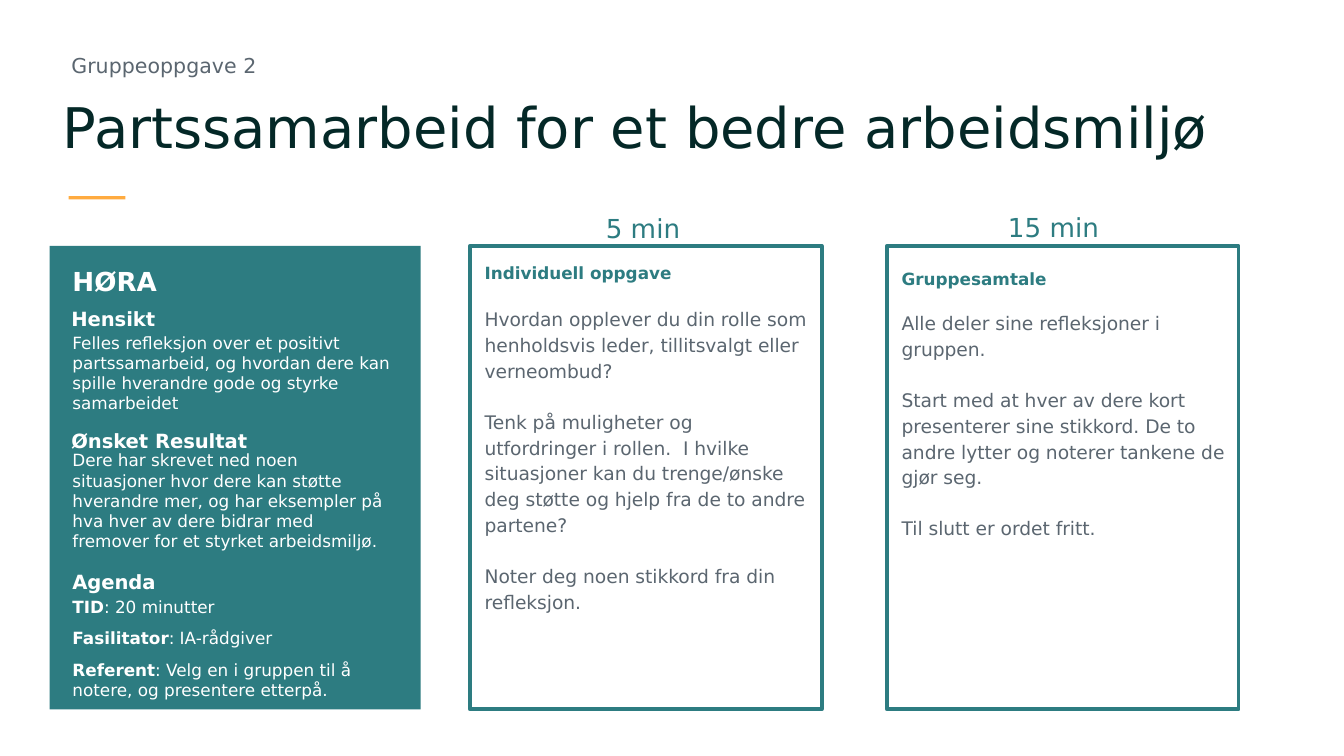
from pptx import Presentation
from pptx.dml.color import RGBColor
from pptx.enum.shapes import MSO_SHAPE as Shape
from pptx.enum.text import MSO_ANCHOR as Anchor
from pptx.util import Cm, Pt

TEAL = RGBColor(0x2D, 0x7C, 0x81)
ORANGE = RGBColor(0xFF, 0xAB, 0x40)
DARK = RGBColor(0x04, 0x28, 0x27)
GREY = RGBColor(0x5B, 0x66, 0x70)
WHITE = RGBColor(0xFF, 0xFF, 0xFF)
FONT = "DejaVu Sans"

COLUMN_TOP, COLUMN_HEIGHT = 4.65, 8.76
PADDED = (0.28, 0.25, 0.25, 0.25)
DEFAULT = (0.25, 0.13, 0.25, 0.13)
TIGHT = (0, 0.03, 0, 0)

LABELS = [
    ("HØRA", 1.37, 5.03, 0.58, 14),
    ("Hensikt", 1.35, 5.66, 0.58, 10.5),
    ("Ønsket Resultat", 1.35, 7.87, 0.69, 10.5),
    ("Agenda", 1.37, 10.52, 0.69, 10.5),
]
DETAILS = [
    ("Felles refleksjon over et positivt  partssamarbeid, og hvordan dere kan "
     "spille hverandre gode og styrke samarbeidet", 6.15, 2.39),
    ("Dere har skrevet ned noen situasjoner hvor dere kan støtte hverandre mer, "
     "og har eksempler på hva hver av dere bidrar med fremover for et styrket "
     "arbeidsmiljø.", 8.38, 2.18),
]
AGENDA = [
    ("TID", ": 20 minutter"),
    ("Fasilitator", ": IA-rådgiver"),
    ("Referent", ": Velg en i gruppen til å notere, og presentere etterpå."),
]
INDIVIDUAL = [
    "Hvordan opplever du din rolle som henholdsvis leder, tillitsvalgt eller "
    "verneombud?",
    "Tenk på muligheter og utfordringer i rollen.  I hvilke situasjoner kan du "
    "trenge/ønske deg støtte og hjelp fra de to andre partene?",
    "Noter deg noen stikkord fra din refleksjon.",
]
GROUP = [
    "Alle deler sine refleksjoner i gruppen.",
    "Start med at hver av dere kort presenterer sine stikkord. De to andre "
    "lytter og noterer tankene de gjør seg.",
    "Til slutt er ordet fritt.",
]


def apply(target, formats):
    for name, value in formats.items():
        setattr(target, name, value)


def add_rectangle(page, left, top, width, height, fill=None, line=None):
    box = page.shapes.add_shape(
        Shape.RECTANGLE, Cm(left), Cm(top), Cm(width), Cm(height))
    box.shadow.inherit = False
    if fill is None:
        box.fill.background()
    else:
        box.fill.solid()
        box.fill.fore_color.rgb = fill
    if line is None:
        box.line.fill.background()
    else:
        box.line.color.rgb = line
        box.line.width = Pt(2)


def add_text(page, left, top, width, height, paragraphs, insets=DEFAULT,
             anchor=Anchor.TOP):
    box = page.shapes.add_textbox(Cm(left), Cm(top), Cm(width), Cm(height))
    frame = box.text_frame
    sides = ("margin_left", "margin_top", "margin_right", "margin_bottom")
    apply(frame, {"word_wrap": True, "vertical_anchor": anchor})
    apply(frame, {side: Cm(inset) for side, inset in zip(sides, insets)})
    for index, (spans, formats) in enumerate(paragraphs):
        para = frame.paragraphs[0] if index == 0 else frame.add_paragraph()
        apply(para, formats)
        for text, size, color, bold in spans:
            span = para.add_run()
            span.text = text
            apply(span.font, {"name": FONT, "size": Pt(size), "bold": bold})
            span.font.color.rgb = color


def line_of(text, size, color, bold=False, **formats):
    return [(text, size, color, bold)], formats


def add_panel(page):
    add_rectangle(page, 0.94, COLUMN_TOP, 7.01, COLUMN_HEIGHT, fill=TEAL)
    for text, left, top, height, size in LABELS:
        label = line_of(text, size, WHITE, True, line_spacing=1.15)
        add_text(page, left, top, 4.9, height, [label], TIGHT, Anchor.BOTTOM)
    spacing = {"space_before": Pt(3), "space_after": Pt(3)}
    for text, top, height in DETAILS:
        add_text(page, 1.12, top, 6.55, height,
                 [line_of(text, 9, WHITE, **spacing)])
    agenda = [([(term, 9, WHITE, True), (text, 9, WHITE, False)], spacing)
              for term, text in AGENDA]
    add_text(page, 1.12, 11.15, 5.82, 2.24, agenda)


def add_card(page, left, text_top, heading, heading_gap, texts):
    add_rectangle(page, left, COLUMN_TOP, 6.65, COLUMN_HEIGHT, line=TEAL)
    paragraphs = [line_of(heading, 9, TEAL, True, line_spacing=1.15)]
    for index, text in enumerate(texts):
        gap = 13.5 if index else heading_gap
        paragraphs.append(line_of(text, 10, GREY, line_spacing=1.15,
                                  space_before=Pt(gap)))
    add_text(page, left, text_top, 6.65, 8.6, paragraphs, PADDED)


def add_heading(page):
    add_text(page, 1.35, 0.25, 7.54, 1.47,
             [line_of("Gruppeoppgave 2", 11, GREY, line_spacing=1.5)],
             (0, 0.25, 0.25, 0.25), Anchor.BOTTOM)
    add_text(page, 0.94, 1.65, 23.42, 1.68,
             [line_of("Partssamarbeid for et bedre arbeidsmiljø", 30, DARK,
                      line_spacing=0.9)], (0.25,) * 4)
    add_rectangle(page, 1.3, 3.71, 1.07, 0.06, fill=ORANGE)


def main():
    deck = Presentation()
    apply(deck, {"slide_width": Cm(25.4), "slide_height": Cm(14.29)})
    page = deck.slides.add_slide(deck.slide_layouts[6])
    add_heading(page)
    add_panel(page)
    add_card(page, 8.88, 4.65, "Individuell oppgave", 12, INDIVIDUAL)
    add_card(page, 16.76, 4.78, "Gruppesamtale", 10.5, GROUP)
    add_text(page, 11.2, 3.89, 1.98, 0.86, [line_of("5 min", 14, TEAL)])
    add_text(page, 18.8, 3.86, 2.34, 0.86, [line_of("15 min", 14, TEAL)])
    deck.save("out.pptx")


if __name__ == "__main__":
    main()
